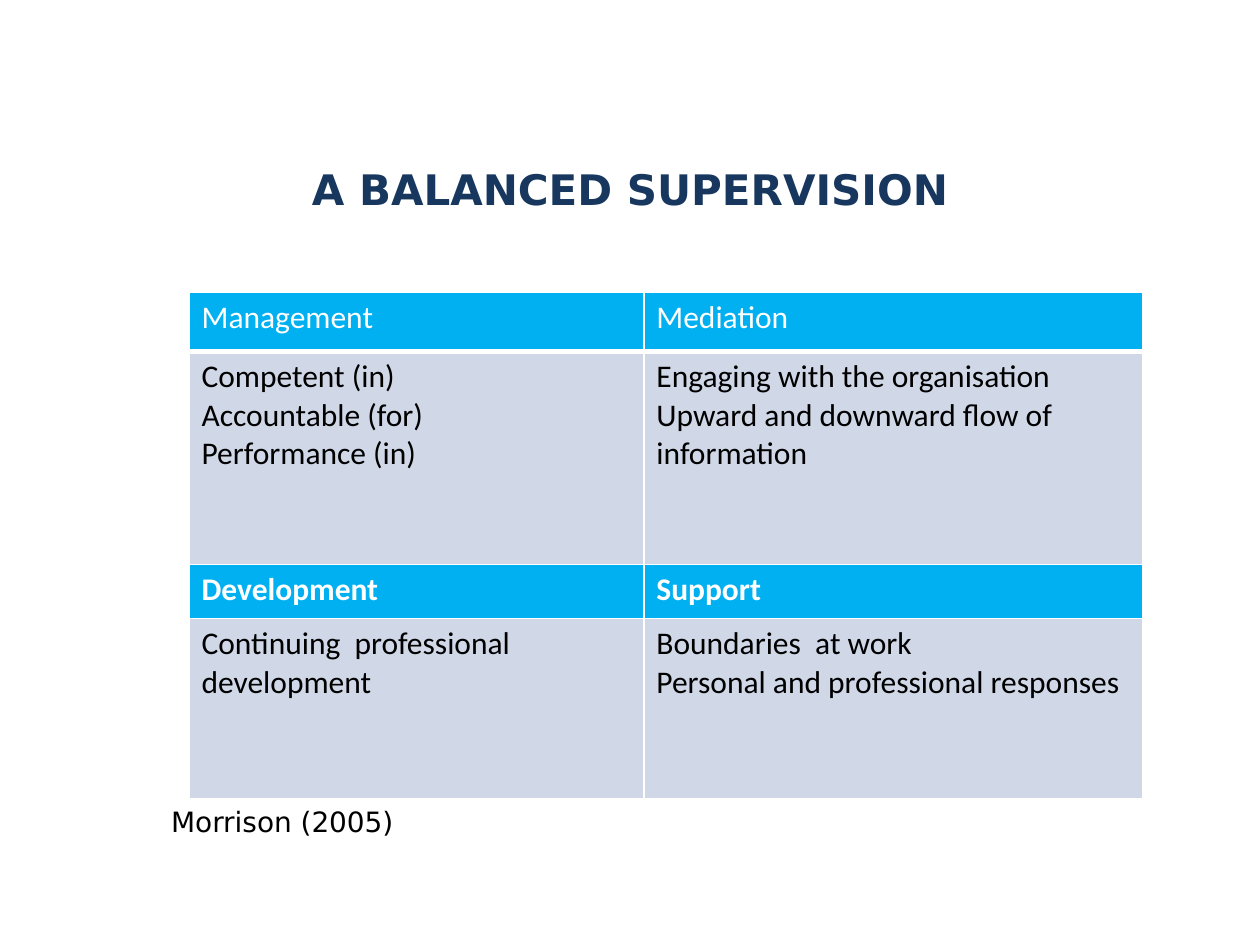
from lxml.etree import SubElement
from pptx import Presentation
from pptx.dml.color import RGBColor
from pptx.enum.text import MSO_ANCHOR, PP_ALIGN
from pptx.oxml.ns import qn
from pptx.util import Pt

NAVY = RGBColor(0x17, 0x37, 0x5E)
BLUE = RGBColor(0x00, 0xB0, 0xF0)
PALE = RGBColor(0xD0, 0xD8, 0xE8)
WHITE = RGBColor(0xFF, 0xFF, 0xFF)
BLACK = RGBColor(0x00, 0x00, 0x00)

COLS = [259.92, 285.12]
# Height, fill, text colour, bold, cell texts
ROWS = [
    (33.84, BLUE, WHITE, False, ["Management", "Mediation"]),
    (121.68, PALE, BLACK, False, [
        "Competent (in)\nAccountable (for)\nPerformance (in)",
        "Engaging with the organisation\n"
        "Upward and downward flow of information"]),
    (30.96, BLUE, WHITE, True, ["Development", "Support"]),
    (102.96, PALE, BLACK, False, [
        "Continuing  professional development",
        "Boundaries  at work\nPersonal and professional responses"]),
]


def write(frame, text, size=18, font="Calibri", color=BLACK, bold=False,
          align=PP_ALIGN.LEFT, anchor=MSO_ANCHOR.TOP):
    frame.text = text
    frame.word_wrap = True
    frame.vertical_anchor = anchor
    for para in frame.paragraphs:
        para.alignment = align
        for run in para.runs:
            run.font.size = Pt(size)
            run.font.name = font
            run.font.bold = bold
            run.font.color.rgb = color


def place(shape, box):
    shape.left, shape.top, shape.width, shape.height = map(Pt, box)


def add_title(slide, box):
    title = slide.shapes.title
    place(title, box)
    write(title.text_frame, "A BALANCED SUPERVISION", size=24,
          font="DejaVu Sans", color=NAVY, bold=True,
          align=PP_ALIGN.CENTER, anchor=MSO_ANCHOR.BOTTOM)


def add_edges(cell, base):
    # Border elements must come before the cell fill
    props = cell._tc.get_or_add_tcPr()
    for side, width in (("L", 1), ("R", 1), ("T", 1), ("B", base)):
        edge = SubElement(props, qn(f"a:ln{side}"), w=str(Pt(width)))
        fill = SubElement(edge, qn("a:solidFill"))
        SubElement(fill, qn("a:srgbClr"), val=str(WHITE))


def add_grid(slide, box):
    grid = slide.shapes.add_table(len(ROWS), len(COLS), *map(Pt, box)).table
    grid.first_row = grid.horz_banding = False
    for col, width in zip(grid.columns, COLS):
        col.width = Pt(width)
    for i, (height, fill, color, bold, texts) in enumerate(ROWS):
        grid.rows[i].height = Pt(height)
        for j, text in enumerate(texts):
            cell = grid.cell(i, j)
            add_edges(cell, 3 if i == 0 else 1)
            cell.fill.solid()
            cell.fill.fore_color.rgb = fill
            write(cell.text_frame, text, color=color, bold=bold)


def add_credit(slide, box):
    note = slide.shapes.add_textbox(*map(Pt, box))
    write(note.text_frame, "Morrison (2005)", size=16, font="DejaVu Sans")


def main():
    deck = Presentation()
    deck.slide_width, deck.slide_height = Pt(720), Pt(540)
    slide = deck.slides.add_slide(deck.slide_layouts[5])
    # Source below the table, heading, table
    add_credit(slide, (90.72, 456.48, 514.8, 26.64))
    add_title(slide, (66.24, 80.64, 587.52, 45.36))
    add_grid(slide, (108, 167.04, sum(COLS), sum(row[0] for row in ROWS)))
    deck.save("out.pptx")


if __name__ == "__main__":
    main()
